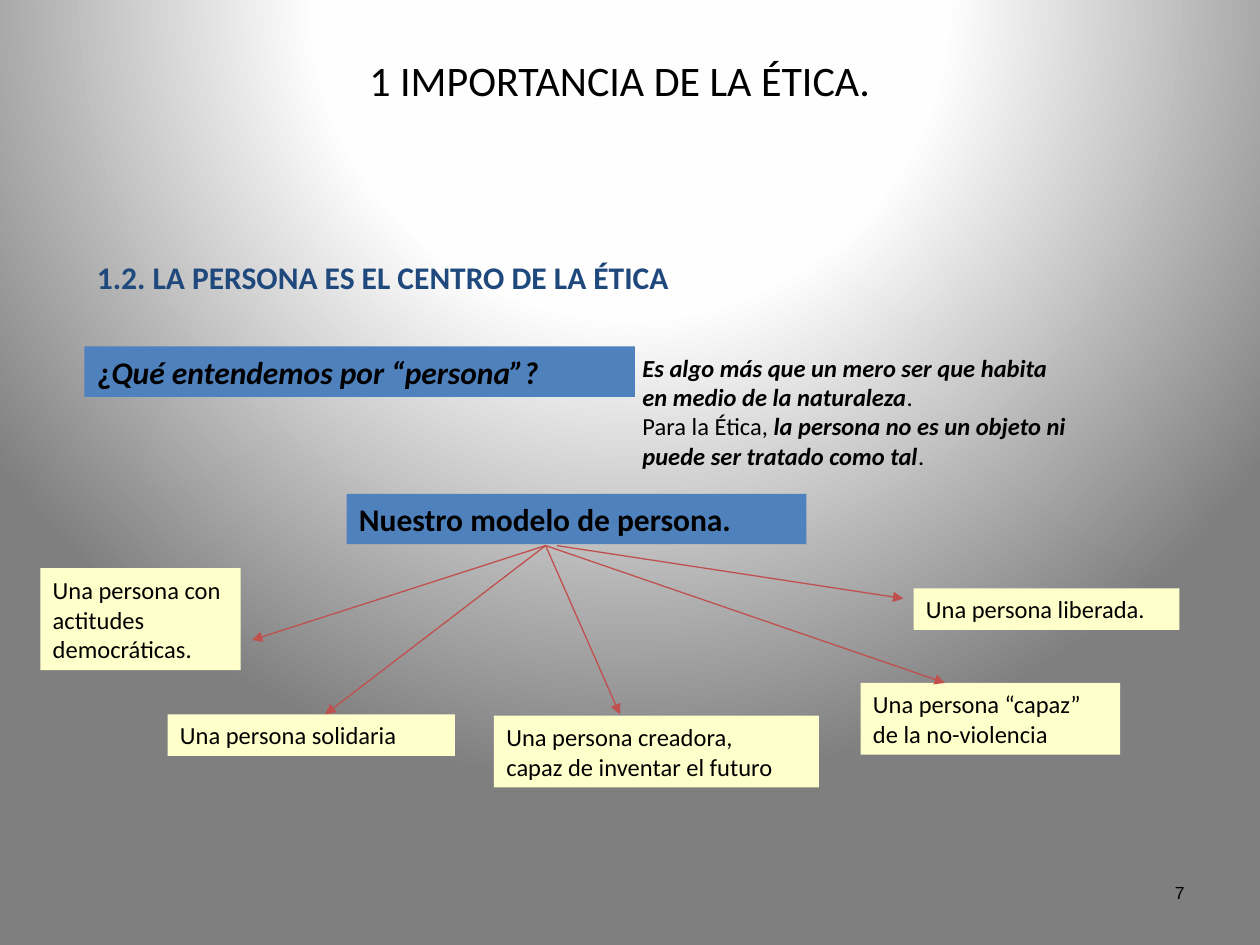
from pptx import Presentation
from pptx.dml.color import RGBColor
from pptx.enum.shapes import MSO_CONNECTOR, MSO_SHAPE
from pptx.enum.text import MSO_ANCHOR, PP_ALIGN
from pptx.oxml import parse_xml
from pptx.oxml.ns import nsdecls, qn
from pptx.util import Inches, Pt

LEFT, CENTER, RIGHT, JUSTIFY = PP_ALIGN.LEFT, PP_ALIGN.CENTER, PP_ALIGN.RIGHT, PP_ALIGN.JUSTIFY
TOP, MIDDLE = MSO_ANCHOR.TOP, MSO_ANCHOR.MIDDLE
RECTANGLE, STRAIGHT = MSO_SHAPE.RECTANGLE, MSO_CONNECTOR.STRAIGHT

BLACK, NAVY, BLUE, CREAM, RED = "000000", "1F497D", "4F81BD", "FFFFCC", "C0504D"
BODY = {"name": "Calibri", "size": Pt(14), "bold": False, "italic": False}
STRONG = {**BODY, "bold": True, "italic": True}
HEADING = {**BODY, "size": Pt(18), "bold": True}
QUESTION = {**HEADING, "italic": True}
TITLE = {**BODY, "size": Pt(24)}
NUMBER = {**BODY, "name": "Arial", "size": Pt(10)}

TRAITS = [
    ((0.32, 4.51, 1.59, 0.81), ["Una persona con", "actitudes", "democráticas."], JUSTIFY),
    ((1.33, 5.67, 2.28, 0.33), ["Una persona solidaria"], LEFT),
    ((7.25, 4.67, 2.11, 0.33), ["Una persona liberada."], JUSTIFY),
    ((3.92, 5.68, 2.58, 0.57), ["Una persona creadora,", "capaz de inventar el futuro"], LEFT),
    ((6.83, 5.42, 2.06, 0.57), ["Una persona “capaz”", "de la no-violencia"], LEFT),
]
ARROWS = [
    ((4.33, 4.33), (2, 5.08)),
    ((4.33, 4.33), (2.58, 5.67)),
    ((4.33, 4.33), (4.92, 5.67)),
    ((4.33, 4.33), (7.5, 5.42)),
    ((4.42, 4.33), (7.17, 4.75)),
]


def paint(color_format, value):
    """Set a colour from a hex string."""
    color_format.rgb = RGBColor.from_string(value)


def inches(values):
    """Turn plain numbers into lengths."""
    return [Inches(value) for value in values]


def write(shape, paragraphs, align=LEFT, anchor=MIDDLE, color=BLACK):
    """Fill a shape with paragraphs, each a list of (text, format) spans."""
    frame = shape.text_frame
    frame.word_wrap = True
    frame.vertical_anchor = anchor
    for index, spans in enumerate(paragraphs):
        para = frame.add_paragraph() if index else frame.paragraphs[0]
        para.alignment = align
        for text, style in spans:
            span = para.add_run()
            span.text = text
            for name, value in style.items():
                setattr(span.font, name, value)
            paint(span.font.color, color)


def add_label(page, box, paragraphs, **layout):
    """Place plain text in a box."""
    write(page.shapes.add_textbox(*inches(box)), paragraphs, **layout)


def add_panel(page, box, fill, paragraphs, **layout):
    """Place a filled rectangle with text in a box."""
    panel = page.shapes.add_shape(RECTANGLE, *inches(box))
    panel.shadow.inherit = False
    panel.fill.solid()
    paint(panel.fill.fore_color, fill)
    panel.line.fill.background()
    write(panel, paragraphs, **layout)


def add_arrow(page, start, end):
    """Draw a thin red arrow from start to end."""
    arrow = page.shapes.add_connector(STRAIGHT, *inches(start + end))
    arrow.line.width = Pt(0.75)
    paint(arrow.line.color, RED)
    arrow.line._get_or_add_ln().append(parse_xml(f'<a:tailEnd {nsdecls("a")} type="triangle"/>'))
    arrow._element.spPr.append(parse_xml(f'<a:effectLst {nsdecls("a")}/>'))


def add_background(page):
    """Give the page a radial gradient from white to grey."""
    page.background.fill.solid()
    solid = next(page._element.iter(qn("p:bgPr"))).find(qn("a:solidFill"))
    stops = "".join(
        f'<a:gs pos="{position * 1000}"><a:srgbClr val="{color}"/></a:gs>'
        for position, color in [(0, "FFFFFF"), (40, "FEFEFE"), (100, "7F7F7F")]
    )
    gradient = parse_xml(
        f'<a:gradFill {nsdecls("a")} rotWithShape="1"><a:gsLst>{stops}</a:gsLst>'
        '<a:path path="circle"><a:fillToRect l="50000" t="-80000" r="50000" b="180000"/></a:path>'
        "</a:gradFill>"
    )
    solid.getparent().replace(solid, gradient)


def add_title(page, box):
    """Move the title placeholder into a box and fill it."""
    title = page.shapes.title
    title.left, title.top, title.width, title.height = inches(box)
    write(title, [[("1 IMPORTANCIA DE LA ÉTICA.", TITLE)]], align=CENTER)


def add_definition(page, box):
    """Explain what a person is, next to the question."""
    add_label(page, box, [
        [("Es algo más que un mero ser que habita en medio de la naturaleza", STRONG), (".", BODY)],
        [("Para la Ética, ", BODY),
         ("la persona no es un objeto ni puede ser tratado como tal", STRONG), (".", BODY)],
    ], anchor=MIDDLE)


def add_model(page, box):
    """Place the model heading, its traits and the arrows to them."""
    add_panel(page, box, BLUE, [[("Nuestro modelo de persona.", HEADING)]])
    for trait_box, lines, align in TRAITS:
        add_panel(page, trait_box, CREAM, [[(line, BODY)] for line in lines], align=align)
    for start, end in ARROWS:
        add_arrow(page, start, end)


def main():
    """Build and save the deck."""
    deck = Presentation()
    deck.slide_width, deck.slide_height = Inches(10), Inches(7.5)
    page = deck.slides.add_slide(deck.slide_layouts[5])
    add_background(page)
    add_title(page, (1.08, 0.01, 7.68, 1.25))
    add_label(page, (7.17, 6.95, 2.33, 0.4), [[("7", NUMBER)]], align=RIGHT, anchor=TOP)
    add_label(page, (0.67, 2, 5.88, 0.4),
              [[("1.2. LA PERSONA ES EL CENTRO DE LA ÉTICA", HEADING)]], anchor=TOP, color=NAVY)
    add_panel(page, (0.67, 2.75, 4.37, 0.4), BLUE,
              [[("¿", HEADING), ("Qué entendemos por “persona”?", QUESTION)]], align=JUSTIFY)
    add_definition(page, (5, 2.75, 3.61, 1.03))
    add_model(page, (2.75, 3.92, 3.65, 0.4))
    deck.save("out.pptx")


if __name__ == "__main__":
    main()
